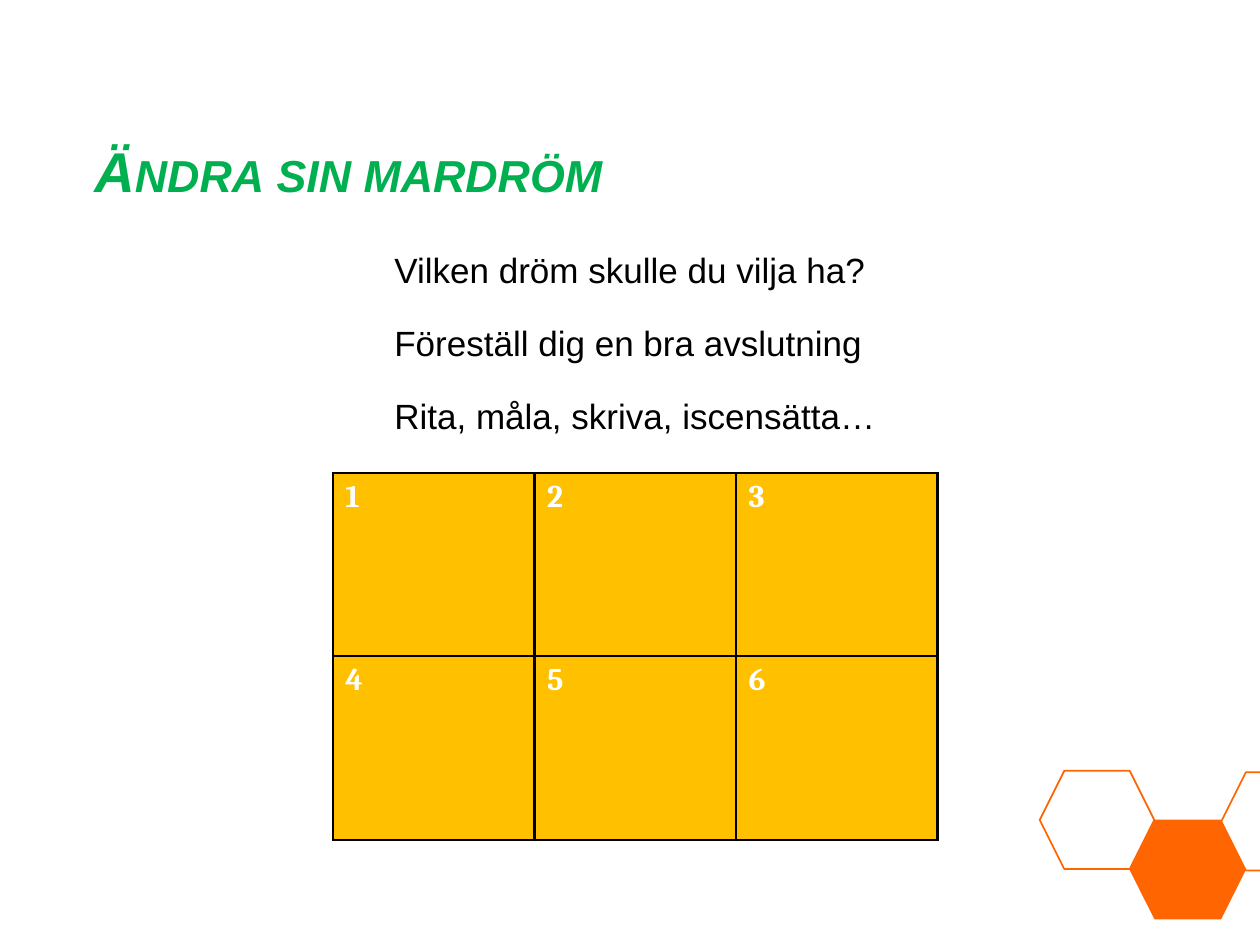
"""Build a slide on changing a nightmare, with a six-panel storyboard."""
from lxml import etree
from pptx import Presentation
from pptx.dml.color import RGBColor
from pptx.enum.shapes import MSO_SHAPE
from pptx.enum.text import MSO_ANCHOR, PP_ALIGN
from pptx.oxml.ns import qn
from pptx.util import Cm, Pt

HEXAGON = MSO_SHAPE.HEXAGON
MIDDLE = MSO_ANCHOR.MIDDLE
LEFT = PP_ALIGN.LEFT
COLORS = {"white": "FFFFFF", "black": "000000", "green": "00B050",
          "orange": "FF6500", "amber": "FFC000"}


class Deck:
    """Hold the style and the current slide."""

    def __init__(self, prs):
        """Add a title-only slide."""
        self.slide = prs.slides.add_slide(prs.slide_layouts[5])
        self.shapes = self.slide.shapes

    def color(self, name):
        """Look up a colour by name."""
        return RGBColor.from_string(COLORS[name])

    def style(self, par, size, color, face="Arial", bold=False):
        """Set the font of a paragraph."""
        par.alignment = LEFT
        font = par.font
        font.name, font.size, font.bold = face, Pt(size), bold
        font.color.rgb = self.color(color)
        return font

    def title(self, text, box):
        """Place and format the title in small capitals."""
        shape = self.shapes.title
        shape.left, shape.top, shape.width, shape.height = map(Cm, box)
        frame = shape.text_frame
        frame.text = text
        frame.vertical_anchor = MIDDLE
        font = self.style(frame.paragraphs[0], 32, "green", bold=True)
        font.italic = True
        font._element.set("cap", "small")

    def hexagon(self, left, top, fill):
        """Draw one hexagon."""
        shape = self.shapes.add_shape(HEXAGON, Cm(left), Cm(top), Cm(2.31), Cm(1.98))
        shape.shadow.inherit = False
        shape.fill.solid()
        shape.fill.fore_color.rgb = self.color(fill)
        shape.line.color.rgb = self.color("orange")
        shape.line.width = Pt(1)

    def text(self, lines, box):
        """Write spaced lines in a text box."""
        frame = self.shapes.add_textbox(*map(Cm, box)).text_frame
        frame.word_wrap = True
        frame.text = "\n".join(lines)
        for i, par in enumerate(frame.paragraphs):
            par.line_spacing = 1.5
            par.space_before = Pt(5.5 if i else 0)
            self.style(par, 20, "black")

    def border(self, cell):
        """Line all four sides of a cell."""
        props = cell._tc.get_or_add_tcPr()
        for i, side in enumerate(("lnL", "lnR", "lnT", "lnB")):
            line = etree.Element(qn(f"a:{side}"), w=str(Pt(1.5)))
            fill = etree.SubElement(line, qn("a:solidFill"))
            etree.SubElement(fill, qn("a:srgbClr"), val=COLORS["black"])
            props.insert(i, line)

    def panels(self, rows, cols, box):
        """Draw a grid of numbered panels."""
        table = self.shapes.add_table(rows, cols, *map(Cm, box)).table
        for i, cell in enumerate(table.iter_cells(), 1):
            cell.text = str(i)
            self.style(cell.text_frame.paragraphs[0], 18, "white", "Cambria", True)
            cell.fill.solid()
            cell.fill.fore_color.rgb = self.color("amber")
            self.border(cell)


def main():
    """Build and save the slide."""
    prs = Presentation()
    prs.slide_width, prs.slide_height = Cm(25.4), Cm(19.05)
    deck = Deck(prs)
    for i, (top, fill) in enumerate(((15.54, "white"), (16.54, "orange"), (15.57, "white"))):
        deck.hexagon(20.96 + i * 1.83, top, fill)
    deck.title("Ändra sin mardröm", (1.65, 2.34, 23.04, 2.16))
    deck.panels(2, 3, (6.71, 9.53, 12.19, 7.4))
    deck.text(("Vilken dröm skulle du vilja ha?", "Föreställ dig en bra avslutning",
               "Rita, måla, skriva, iscensätta…"), (7.7, 4.47, 11.51, 3.81))
    prs.save("out.pptx")


if __name__ == "__main__":
    main()
